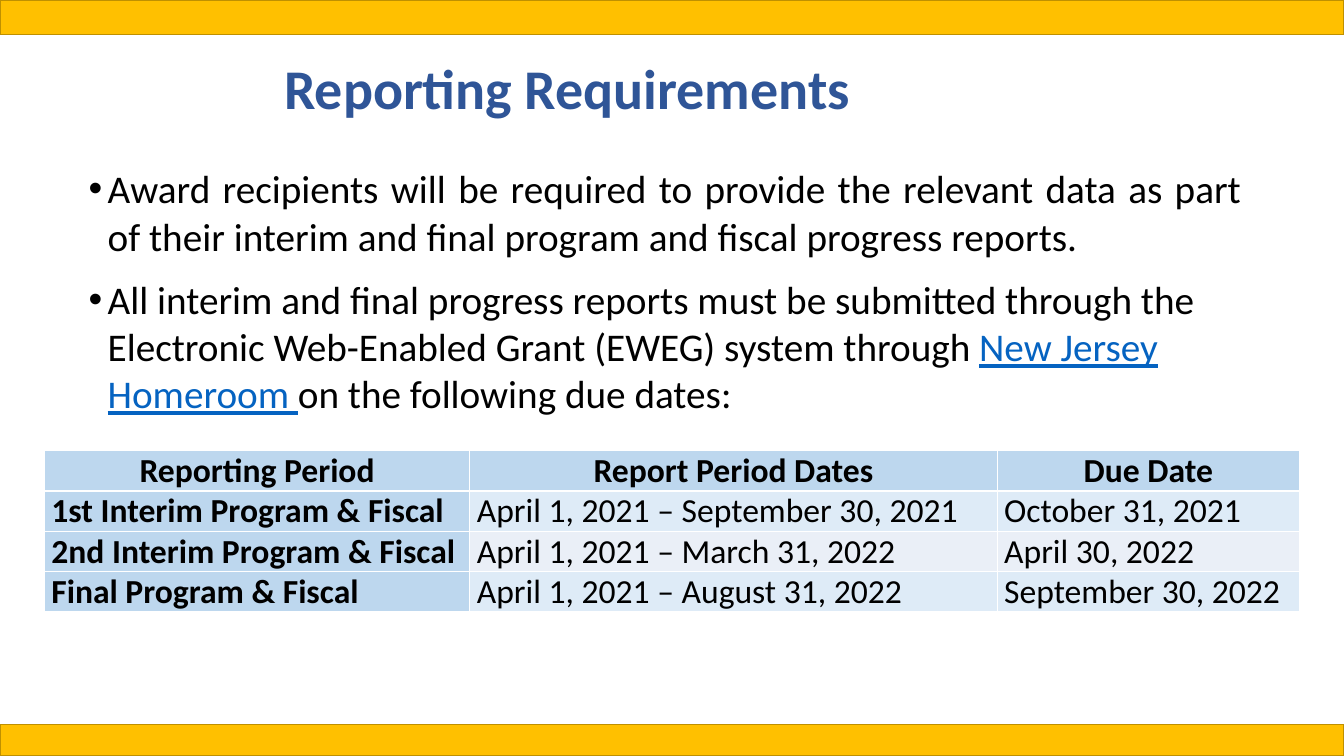
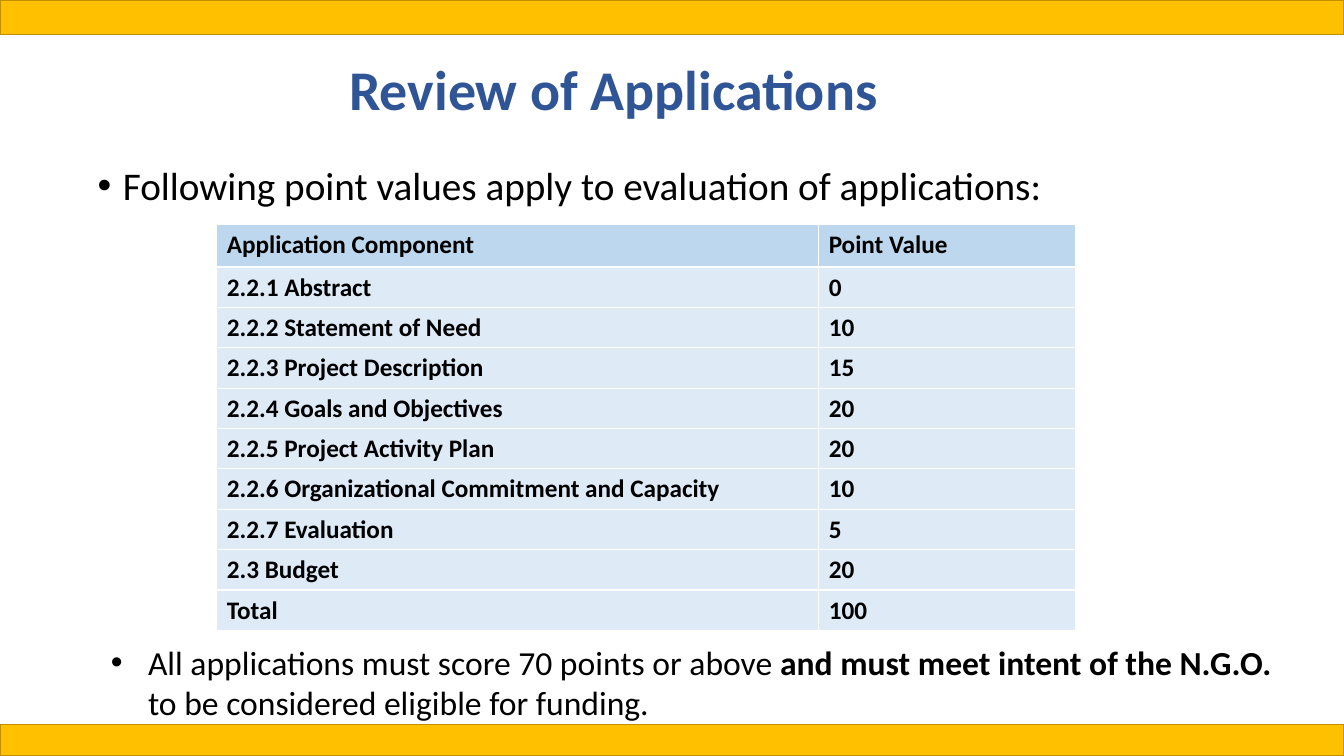
from pptx import Presentation
from pptx.dml.color import RGBColor
from pptx.enum.shapes import MSO_SHAPE
from pptx.enum.text import MSO_ANCHOR, PP_ALIGN
from pptx.oxml.ns import qn
from pptx.util import Inches, Pt
from lxml.etree import SubElement

# Shared look
FONT = "Calibri"
GOLD, GOLD_EDGE = "FFC000", "BF9000"
TITLE_BLUE, LINK_BLUE, BLACK = "2F5597", "0563C1", "000000"
HEADER_BLUE, ROW_BLUE, ROW_GREY = "BDD7EE", "DEEBF7", "EAEFF7"
rgb = RGBColor.from_string


def add_text(slide, box, paragraphs, size, color=BLACK, bold=False,
             anchor=MSO_ANCHOR.TOP, bullet=None):
    """Add a text box; a run is (text, colour, bold, underline), bullet is (margin, hang)."""
    frame = slide.shapes.add_textbox(*map(Inches, box)).text_frame
    frame.word_wrap = True
    frame.vertical_anchor = anchor
    for i, runs in enumerate(paragraphs):
        paragraph = frame.add_paragraph() if i else frame.paragraphs[0]
        if bullet:
            margin, hang = bullet
            properties = paragraph._p.get_or_add_pPr()
            properties.set("marL", str(Inches(margin)))
            properties.set("indent", str(-Inches(hang)))
            SubElement(properties, qn("a:buFont"), typeface="Arial")
            SubElement(properties, qn("a:buChar"), char="•")
        paragraph.font.name = FONT
        paragraph.font.size = Pt(size)
        paragraph.font.bold = bold
        paragraph.font.color.rgb = rgb(color)
        for text, run_color, run_bold, underline in runs:
            run = paragraph.add_run()
            run.text = text
            if run_color:
                run.font.color.rgb = rgb(run_color)
            if run_bold:
                run.font.bold = True
            if underline:
                run.font.underline = True
    return frame


def add_grid(slide, left, top, widths, heights, rows, size, margins, fill_of, bold_of):
    """Add a table whose cell fills and bold text follow from row and column."""
    table = slide.shapes.add_table(
        len(rows), len(widths), Inches(left), Inches(top),
        Inches(sum(widths)), Inches(sum(heights))).table
    table.horz_banding = False
    for column, width in zip(table.columns, widths):
        column.width = Inches(width)
    for r, row in enumerate(rows):
        table.rows[r].height = Inches(heights[r])
        for c, text in enumerate(row):
            cell = table.cell(r, c)
            cell.fill.solid()
            cell.fill.fore_color.rgb = rgb(fill_of(r, c))
            cell.margin_left = cell.margin_right = Inches(margins[0])
            cell.margin_top = cell.margin_bottom = Inches(margins[1])
            cell.text = text
            font = cell.text_frame.paragraphs[0].font
            font.name, font.size, font.bold = FONT, Pt(size), bold_of(r, c)
            font.color.rgb = rgb(BLACK)
    return table


prs = Presentation()
prs.slide_width, prs.slide_height = Inches(13.33), Inches(7.5)

# Bands and title of every slide
slides = []
for title, title_box in (
    ("Reporting Requirements", (0.2, 0.51, 10.85, 0.8)),
    ("Review of Applications", (2.15, 0.57, 7.87, 0.69)),
):
    slide = prs.slides.add_slide(prs.slide_layouts[6])
    for top, height in ((0, 0.34), (7.19, 0.31)):
        band = slide.shapes.add_shape(
            MSO_SHAPE.RECTANGLE, 0, Inches(top), prs.slide_width, Inches(height))
        band.shadow.inherit = False
        band.fill.solid()
        band.fill.fore_color.rgb = rgb(GOLD)
        band.line.color.rgb = rgb(GOLD_EDGE)
        band.line.width = Pt(1)
    heading = add_text(slide, title_box, [[(title, None, False, False)]], 40,
                       TITLE_BLUE, True, MSO_ANCHOR.MIDDLE).paragraphs[0]
    heading.alignment = PP_ALIGN.CENTER
    heading.line_spacing = 0.9
    slides.append(slide)
reporting, review = slides

# Reporting Requirements: bullets
requirements = add_text(reporting, (0.78, 1.57, 11.63, 2.63), [
    [("Award recipients will be required to provide the relevant data as part of "
      "their interim and final program and fiscal progress reports.", None, False, False)],
    [("All interim and final progress reports must be submitted through the Electronic "
      "Web-Enabled Grant (EWEG) system through ", None, False, False),
     ("New Jersey Homeroom ", LINK_BLUE, False, True),
     ("on the following due dates:", None, False, False)],
], 28, anchor=MSO_ANCHOR.MIDDLE, bullet=(0.19, 0.19))
requirements.paragraphs[0].alignment = PP_ALIGN.JUSTIFY
requirements.paragraphs[0].space_after = Pt(12)

# Reporting Requirements: due dates
due_dates = [
    ("Reporting Period", "Report Period Dates", "Due Date"),
    ("1st Interim Program & Fiscal", "April 1, 2021 – September 30, 2021", "October 31, 2021"),
    ("2nd Interim Program & Fiscal", "April 1, 2021 – March 31, 2022", "April 30, 2022"),
    ("Final Program & Fiscal", "April 1, 2021 – August 31, 2022", "September 30, 2022"),
]
schedule = add_grid(
    reporting, 0.44, 4.47, (4.22, 5.23, 3), [0.4] * len(due_dates), due_dates, 24, (0.07, 0),
    lambda r, c: HEADER_BLUE if r == 0 or c == 0 else (ROW_GREY, ROW_BLUE)[r % 2],
    lambda r, c: r == 0 or c == 0)
for cell in schedule.rows[0].cells:
    cell.text_frame.paragraphs[0].alignment = PP_ALIGN.CENTER

# Review of Applications: introduction
add_text(review, (0.87, 1.55, 11.59, 0.68),
         [[("Following point values apply to evaluation of applications:", None, False, False)]],
         28, bullet=(0.25, 0.25))

# Review of Applications: point values
point_values = [
    ("Application Component", "Point Value"),
    ("2.2.1 Abstract", "0"),
    ("2.2.2 Statement of Need", "10"),
    ("2.2.3 Project Description", "15"),
    ("2.2.4 Goals and Objectives", "20"),
    ("2.2.5 Project Activity Plan", "20"),
    ("2.2.6 Organizational Commitment and Capacity", "10"),
    ("2.2.7 Evaluation", "5"),
    ("2.3 Budget", "20"),
    ("Total", "100"),
]
add_grid(review, 2.15, 2.23, (5.97, 2.55), [0.42] + [0.4] * (len(point_values) - 1),
         point_values, 18, (0.1, 0.05),
         lambda r, c: ROW_BLUE if r else HEADER_BLUE,
         lambda r, c: True)

# Review of Applications: eligibility
add_text(review, (0.37, 6.32, 12.59, 0.91), [[
    ("All applications must score 70 points or above ", None, False, False),
    ("and must meet intent of the N.G.O.", None, True, False),
    (" to be considered eligible for funding.", None, False, False),
]], 24, bullet=(1, 0.37))

prs.save("out.pptx")
